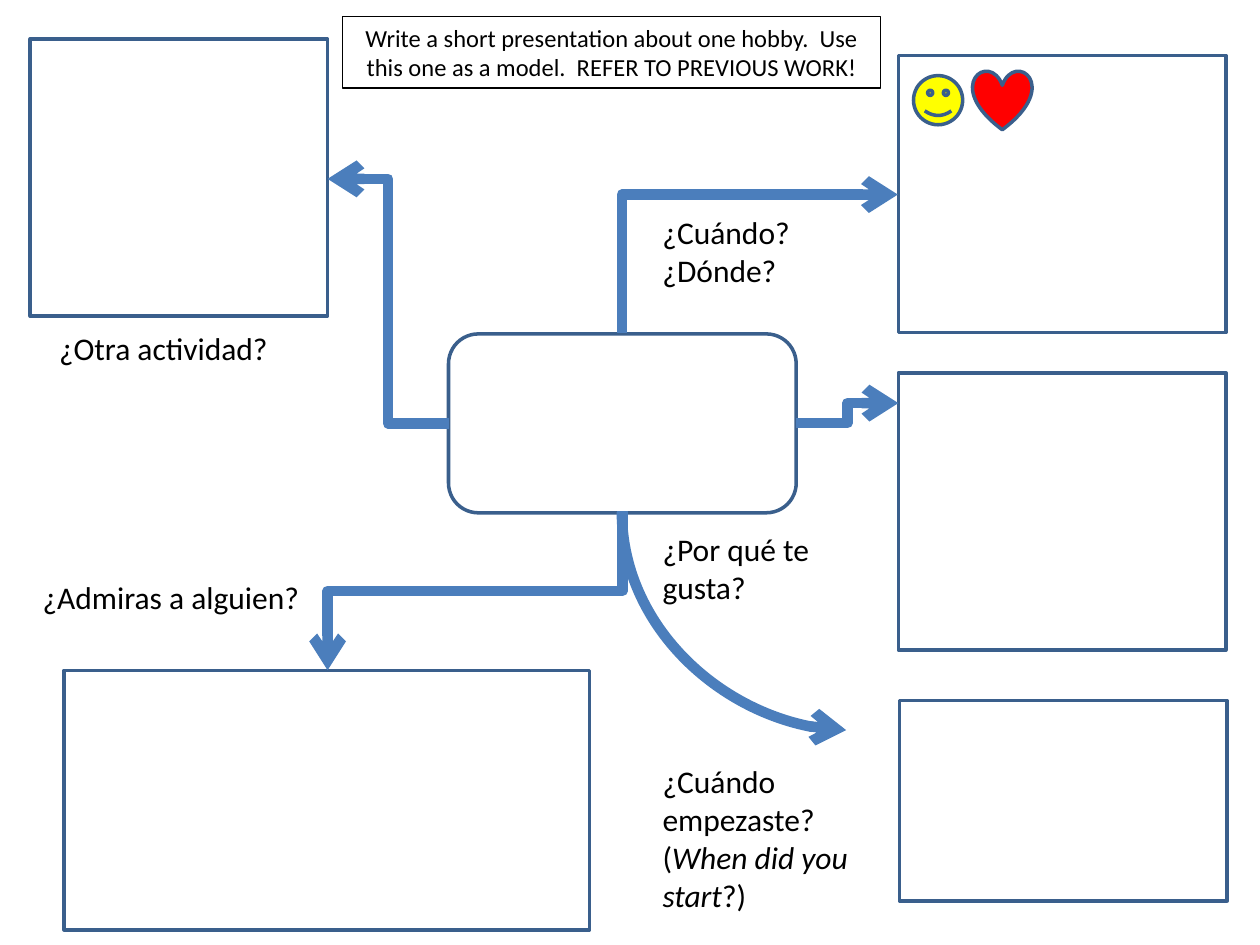
"""Builds a one-slide Spanish mind map for planning a talk about a hobby."""
from lxml.etree import SubElement
from pptx import Presentation
from pptx.dml.color import RGBColor
from pptx.enum.shapes import MSO_CONNECTOR as Connector, MSO_SHAPE as Shape
from pptx.enum.text import MSO_ANCHOR as Anchor, PP_ALIGN as Align
from pptx.oxml.ns import qn
from pptx.util import Pt

PX = 9144
WIDTH, HEIGHT = 1000, 750
COLORS = {"outline": "3A5F8C", "arrow": "4B7EBC", "text": "000000",
          "smile": "FFFF00", "heart": "FF0000"}

SHAPES = [
    (Shape.ROUNDED_RECTANGLE, (356, 265, 276, 142), None),
    (Shape.RECTANGLE, (713, 44, 260, 220), None),
    (Shape.SMILEY_FACE, (725, 60, 39, 39), "smile"),
    (Shape.HEART, (772, 56, 47, 47), "heart"),
    (Shape.RECTANGLE, (713, 296, 260, 220), None),
    (Shape.RECTANGLE, (714, 556, 260, 159), None),
    (Shape.RECTANGLE, (51, 532, 417, 206), None),
    (Shape.RECTANGLE, (24, 31, 236, 220), None),
]
ARROWS = [
    ("bentConnector2", (548, 100, 110, 219), 90, ("flipH", "flipV")),
    ("bentConnector3", (632, 320, 81, 16), 0, ("flipV",)),
    ("curvedConnector2", (496, 404, 173, 178), 270, ("flipH",)),
    ("bentConnector3", (260, 142, 96, 194), 180, ()),
    ("bentConnector3", (314, 352, 126, 234), 90, ()),
]
TASK = ("Write a short presentation about one hobby.  Use this one as a model.  "
        "REFER TO PREVIOUS WORK!")
TASK_BOX = (272, 13, 427, 57)
QUESTIONS = [
    ((516, 164, 150, 71), [("¿Cuándo?", False), ("\n", False), ("¿Dónde?", False)]),
    ((516, 416, 191, 71), [("¿Por qué te gusta?", False)]),
    ((516, 600, 191, 131), [("¿Cuándo empezaste? (", False),
                            ("When did you start", True), ("?)", False)]),
    ((24, 454, 373, 40), [("¿Admiras a alguien?", False)]),
    ((37, 256, 268, 40), [("¿Otra actividad?", False)]),
]


def emu(box):
    return [length * PX for length in box]


def rgb(name):
    return RGBColor.from_string(COLORS[name])


def set_line(item, color, width):
    item.line.color.rgb = rgb(color)
    item.line.width = Pt(width)


def add_figure(slide, kind, box, fill):
    shape = slide.shapes.add_shape(kind, *emu(box))
    shape.shadow.inherit = False
    if fill:
        shape.fill.solid()
        shape.fill.fore_color.rgb = rgb(fill)
    else:
        shape.fill.background()
    set_line(shape, "outline", 2)


def add_arrow(slide, preset, box, angle, flips):
    left, top, width, height = emu(box)
    arrow = slide.shapes.add_connector(
        Connector.ELBOW, left, top, left + width, top + height)
    set_line(arrow, "arrow", 6)
    properties = arrow._element.spPr
    properties.find(qn("a:prstGeom")).set("prst", preset)
    transform = properties.find(qn("a:xfrm"))
    transform.set("rot", str(angle * 60000))
    for flip in flips:
        transform.set(flip, "1")
    SubElement(properties.find(qn("a:ln")), qn("a:tailEnd"), type="arrow")
    SubElement(properties, qn("a:effectLst"))


def add_text(slide, box, runs, size, align=Align.LEFT):
    text_box = slide.shapes.add_textbox(*emu(box))
    frame = text_box.text_frame
    frame.word_wrap = True
    frame.vertical_anchor = Anchor.TOP
    paragraph = frame.paragraphs[0]
    paragraph.alignment = align
    for text, italic in runs:
        if text == "\n":
            paragraph.add_line_break()
            continue
        run = paragraph.add_run()
        run.text = text
        style = {"name": "Calibri", "size": Pt(size), "italic": italic}
        for attribute, value in style.items():
            setattr(run.font, attribute, value)
        run.font.color.rgb = rgb("text")
    return text_box


def main():
    presentation = Presentation()
    presentation.slide_width, presentation.slide_height = emu((WIDTH, HEIGHT))
    slide = presentation.slides.add_slide(presentation.slide_layouts[6])
    for figure in SHAPES:
        add_figure(slide, *figure)
    for arrow in ARROWS:
        add_arrow(slide, *arrow)
    task = add_text(slide, TASK_BOX, [(TASK, False)], 14, Align.CENTER)
    set_line(task, "text", 0.75)
    for box, runs in QUESTIONS:
        add_text(slide, box, runs, 18)
    presentation.save("out.pptx")


if __name__ == "__main__":
    main()
